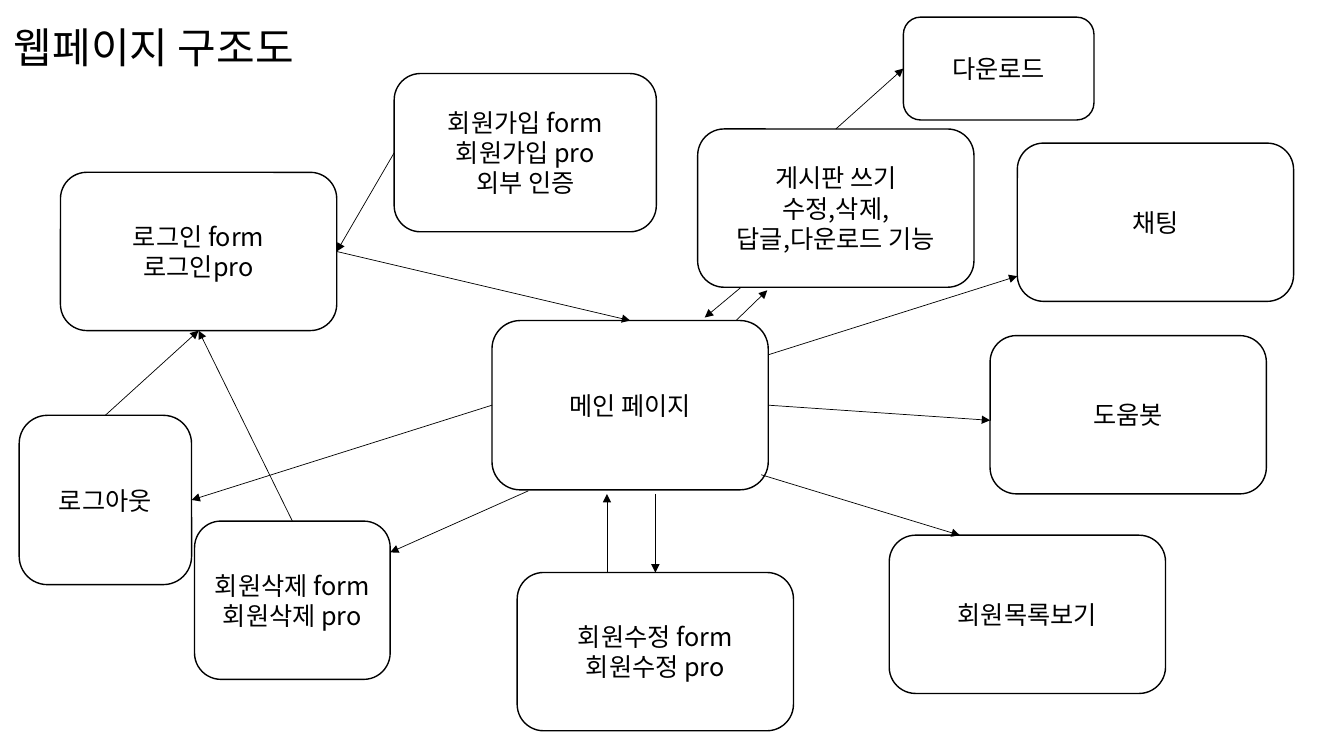
"""Builds the web page structure diagram slide."""
from pptx import Presentation
from pptx import util as u
from pptx.dml.color import RGBColor
from pptx.enum import shapes, text
from pptx.oxml import ns
from lxml import etree

FONT = "Noto Sans CJK KR"
COLORS = {"ink": "000000"}
INK = RGBColor.from_string(COLORS["ink"])
TOP, LEFT, BOTTOM, RIGHT = range(4)


def write(tf, content, size=18, align=text.PP_ALIGN.CENTER, wrap=True):
    tf.word_wrap = wrap
    for i, line in enumerate(content.split("\n")):
        p = tf.paragraphs[0] if i == 0 else tf.add_paragraph()
        p.alignment = align
        r = p.add_run()
        r.text = line
        r.font.size = u.Pt(size)
        r.font.name = FONT
        r.font.color.rgb = INK
        etree.SubElement(r.font._element, ns.qn("a:ea"), typeface=FONT)


prs = Presentation()
prs.slide_width, prs.slide_height = u.Inches(13.33), u.Inches(7.5)
s = prs.slides.add_slide(prs.slide_layouts[6])

pages = {
    "login": (0.6, 1.71, 2.74, 1.57, "로그인 form\n로그인pro"),
    "chat": (10.09, 1.42, 2.74, 1.57, "채팅"),
    "delete": (1.93, 5.17, 1.94, 1.57, "회원삭제 form\n회원삭제 pro"),
    "join": (3.91, 0.73, 2.6, 1.57, "회원가입 form\n회원가입 pro\n외부 인증"),
    "main": (4.88, 3.18, 2.74, 1.68, "메인 페이지"),
    "board": (6.92, 1.28, 2.74, 1.57, "게시판 쓰기\n수정,삭제,\n답글,다운로드 기능"),
    "edit": (5.13, 5.68, 2.74, 1.57, "회원수정 form\n회원수정 pro"),
    "members": (8.82, 5.31, 2.74, 1.57, "회원목록보기"),
    "helpbot": (9.82, 3.33, 2.74, 1.57, "도움봇"),
    "logout": (0.19, 4.12, 1.71, 1.68, "로그아웃"),
    "download": (8.96, 0.17, 1.89, 1.02, "다운로드"),
}
boxes = {}
for name, (x, y, w, h, label) in pages.items():
    sp = s.shapes.add_shape(shapes.MSO_SHAPE.ROUNDED_RECTANGLE,
                            u.Inches(x), u.Inches(y), u.Inches(w), u.Inches(h))
    sp.shadow.inherit = False
    sp.fill.background()
    sp.line.color.rgb = INK
    sp.line.width = u.Pt(1)
    sp.text_frame.vertical_anchor = text.MSO_ANCHOR.MIDDLE
    write(sp.text_frame, label)
    boxes[name] = sp

arrows = [
    (("delete", TOP), ("login", BOTTOM)),
    (("join", LEFT), ("login", RIGHT)),
    (("login", RIGHT), ("main", TOP)),
    (("main", LEFT), ("logout", RIGHT)),
    ((6.5, 4.9), ("edit", TOP)),
    ((6.02, 5.68), (6.02, 4.9)),
    (("main", RIGHT), (9.82, 4.17)),
    ((5.24, 4.87), (3.87, 5.48)),
    ((7.62, 3.52), (10.09, 2.74)),
    ((7.55, 4.71), (9.52, 5.31)),
    ((7.3, 3.18), (7.61, 2.88)),
    ((7.35, 2.85), (6.99, 3.15)),
    (("board", TOP), ("download", LEFT)),
    (("logout", TOP), ("login", BOTTOM)),
]
for start, end in arrows:
    points = [(0, 0) if pt[0] in boxes else pt for pt in (start, end)]
    c = s.shapes.add_connector(shapes.MSO_CONNECTOR.STRAIGHT,
                               *(u.Inches(v) for pt in points for v in pt))
    if start[0] in boxes:
        c.begin_connect(boxes[start[0]], start[1])
    if end[0] in boxes:
        c.end_connect(boxes[end[0]], end[1])
    c.line.color.rgb = INK
    c.line.width = u.Pt(0.5)
    etree.SubElement(c.line._get_or_add_ln(), ns.qn("a:tailEnd"), type="triangle")
    etree.SubElement(c._element.spPr, ns.qn("a:effectLst"))

title = s.shapes.add_textbox(u.Inches(0.04), u.Inches(0.16), u.Inches(3.29), u.Inches(0.61))
write(title.text_frame, "웹페이지 구조도", size=30, align=text.PP_ALIGN.LEFT, wrap=False)
title.text_frame.auto_size = text.MSO_AUTO_SIZE.SHAPE_TO_FIT_TEXT

prs.save("out.pptx")
